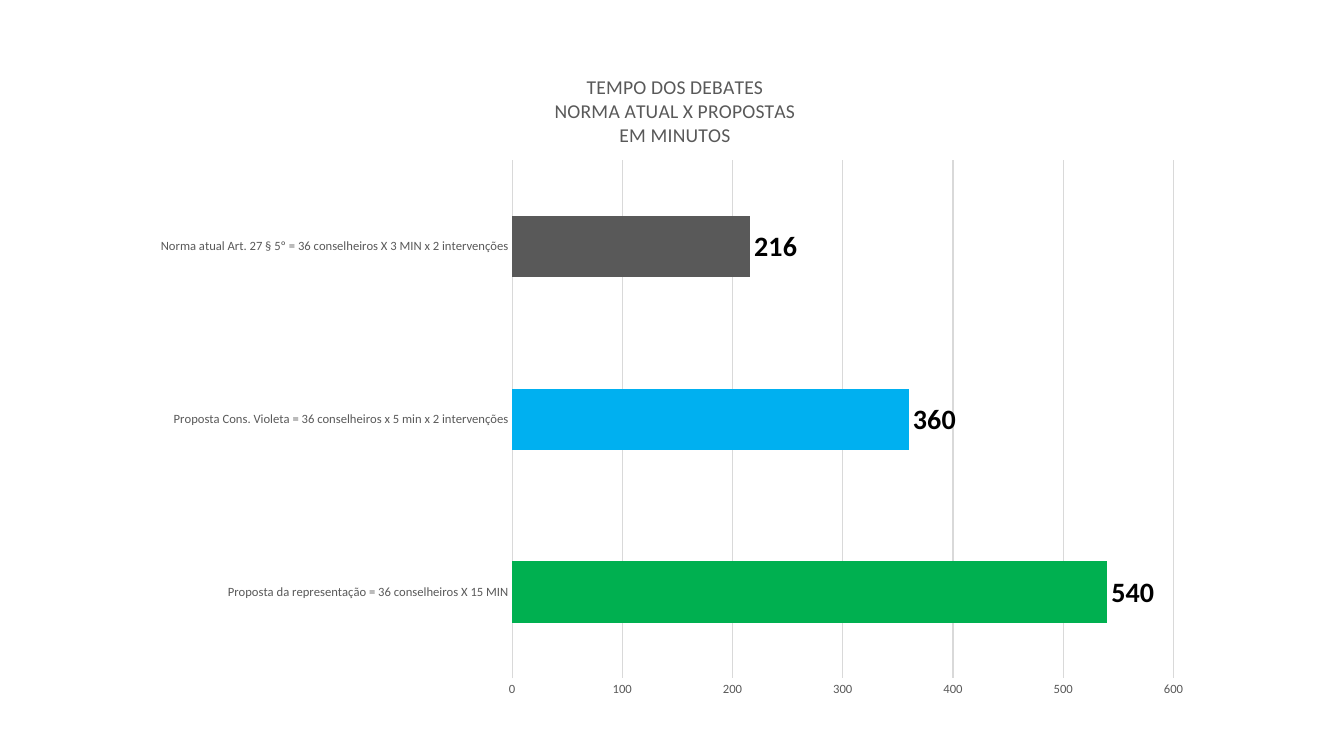
import pptx
import pptx.chart.data
import pptx.dml.color
import pptx.enum.chart
import pptx.oxml
import pptx.oxml.ns
import pptx.util
from pptx.dml.color import RGBColor
from pptx.util import Inches, Pt

TITLE_LINES = ["TEMPO DOS DEBATES", "NORMA ATUAL X PROPOSTAS", "EM MINUTOS"]
GREEN = RGBColor(0x00, 0xB0, 0x50)
BLUE = RGBColor(0x00, 0xB0, 0xF0)
GRAY = RGBColor(0x59, 0x59, 0x59)
LIGHT_GRAY = RGBColor(0xD9, 0xD9, 0xD9)
BLACK = RGBColor(0, 0, 0)
PROPOSALS = [
    ("Proposta da representação = 36 conselheiros X 15 MIN", 540, GREEN),
    ("Proposta Cons. Violeta = 36 conselheiros x 5 min x 2 intervenções", 360, BLUE),
    ("Norma atual Art. 27 § 5º = 36 conselheiros X 3 MIN x 2 intervenções", 216, GRAY),
]
FONT = "Calibri"

# Left, top, width, height on the slide, in inches
CHART_BOX = (1.39, 0.45, 10.56, 6.59)
PLOT_BOX = (5.08, 1.59, 6.56, 5.14)
TITLE_CORNER = (5.47, 0.7)


def set_font(font, size, color, bold=False):
    font.name, font.size, font.bold = FONT, Pt(size), bold
    font.color.rgb = color


def layout_xml(box, target=""):
    """Manual chart layout for a box, or a corner, given in slide inches."""
    left, top, width, height = CHART_BOX
    fractions = [(box[0] - left) / width, (box[1] - top) / height]
    if len(box) == 4:
        fractions += [box[2] / width, box[3] / height]
    modes = '<c:xMode val="edge"/><c:yMode val="edge"/>'
    values = "".join(f'<c:{name} val="{value:.4f}"/>' for name, value in zip("xywh", fractions))
    return pptx.oxml.parse_xml(
        f'<c:layout {pptx.oxml.ns.nsdecls("c")}><c:manualLayout>'
        f"{target}{modes}{values}</c:manualLayout></c:layout>")


def place(element, layout, position):
    for old in element.findall(pptx.oxml.ns.qn("c:layout")):
        element.remove(old)
    element.insert(position, layout)


def add_title(chart):
    chart.has_title = True
    title = chart.chart_title
    frame = title.text_frame
    for index, line in enumerate(TITLE_LINES):
        paragraph = frame.paragraphs[0] if index == 0 else frame.add_paragraph()
        run = paragraph.add_run()
        run.text = line
        set_font(run.font, 14, GRAY)
    title.include_in_layout = False
    place(title._element, layout_xml(TITLE_CORNER), 1)


def style_axes(chart):
    categories, minutes = chart.category_axis, chart.value_axis
    for axis in (categories, minutes):
        axis.major_tick_mark = axis.minor_tick_mark = pptx.enum.chart.XL_TICK_MARK.NONE
        set_font(axis.tick_labels.font, 9, GRAY)
    categories.has_major_gridlines = False
    minutes.has_major_gridlines = True
    minutes.minimum_scale, minutes.maximum_scale, minutes.major_unit = 0, 600, 100
    minutes.format.line.fill.background()
    for line in (categories.format.line, minutes.major_gridlines.format.line):
        line.color.rgb = LIGHT_GRAY
        line.width = Pt(0.75)


def style_bars(plot):
    plot.gap_width = 182
    plot.vary_by_categories = False
    series = plot.series[0]
    series.format.fill.solid()
    series.format.fill.fore_color.rgb = GRAY
    for index, (_, _, color) in enumerate(PROPOSALS):
        fill = series.points[index].format.fill
        fill.solid()
        fill.fore_color.rgb = color
    labels = series.data_labels
    labels.show_value = True
    labels.position = pptx.enum.chart.XL_LABEL_POSITION.OUTSIDE_END
    set_font(labels.font, 20, BLACK, bold=True)


def main():
    deck = pptx.Presentation()
    deck.slide_width, deck.slide_height = Inches(13.33), Inches(7.5)
    slide = deck.slides.add_slide(deck.slide_layouts[6])

    debate_times = pptx.chart.data.CategoryChartData()
    debate_times.categories = [name for name, _, _ in PROPOSALS]
    debate_times.add_series("Series 1", [minutes for _, minutes, _ in PROPOSALS])
    chart = slide.shapes.add_chart(
        pptx.enum.chart.XL_CHART_TYPE.BAR_CLUSTERED,
        *map(Inches, CHART_BOX), debate_times).chart
    chart.has_legend = False
    set_font(chart.font, 10, BLACK)
    add_title(chart)
    style_axes(chart)
    style_bars(chart.plots[0])
    plot_area = chart._chartSpace.chart.plotArea
    place(plot_area, layout_xml(PLOT_BOX, '<c:layoutTarget val="inner"/>'), 0)
    deck.save("out.pptx")


if __name__ == "__main__":
    main()
